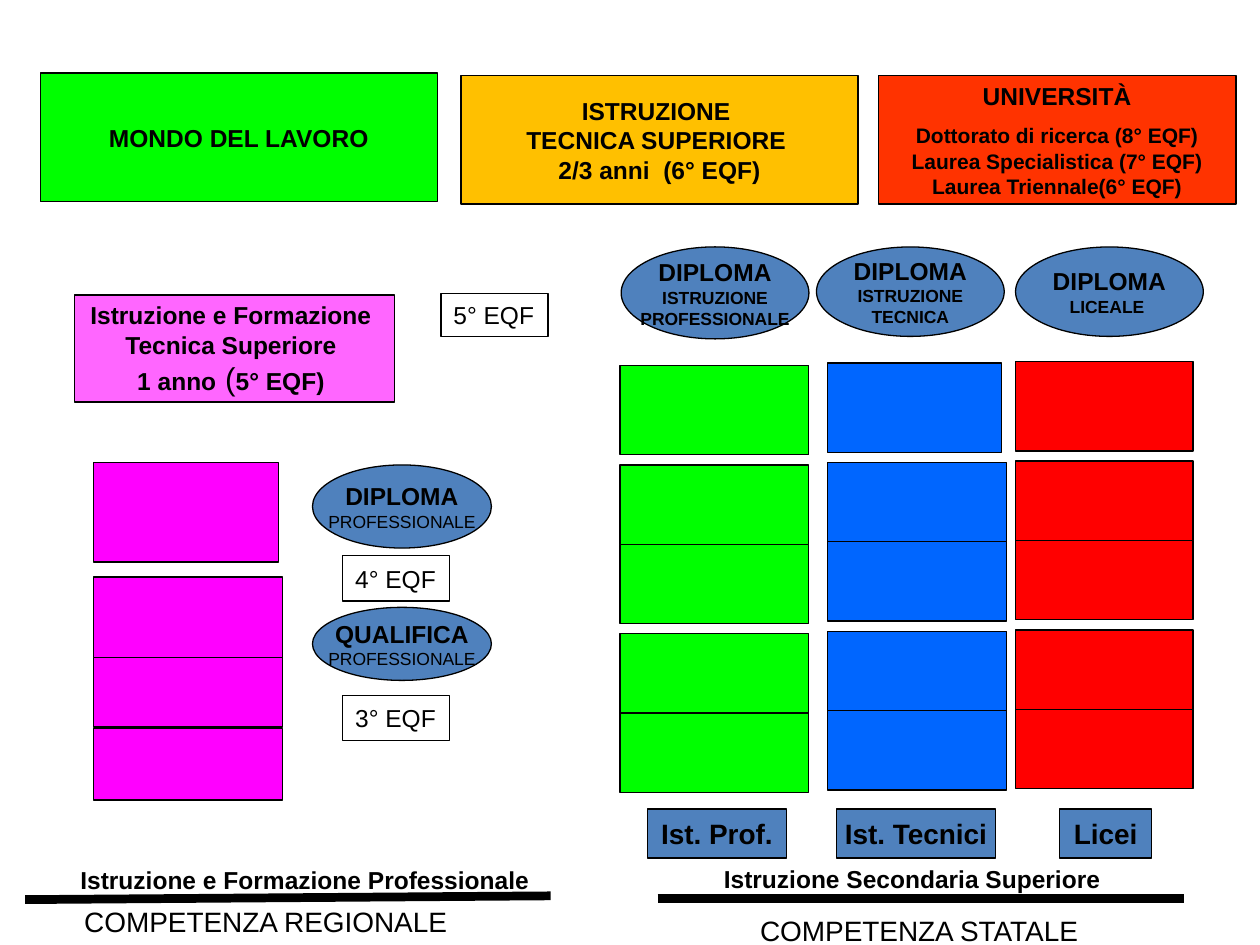
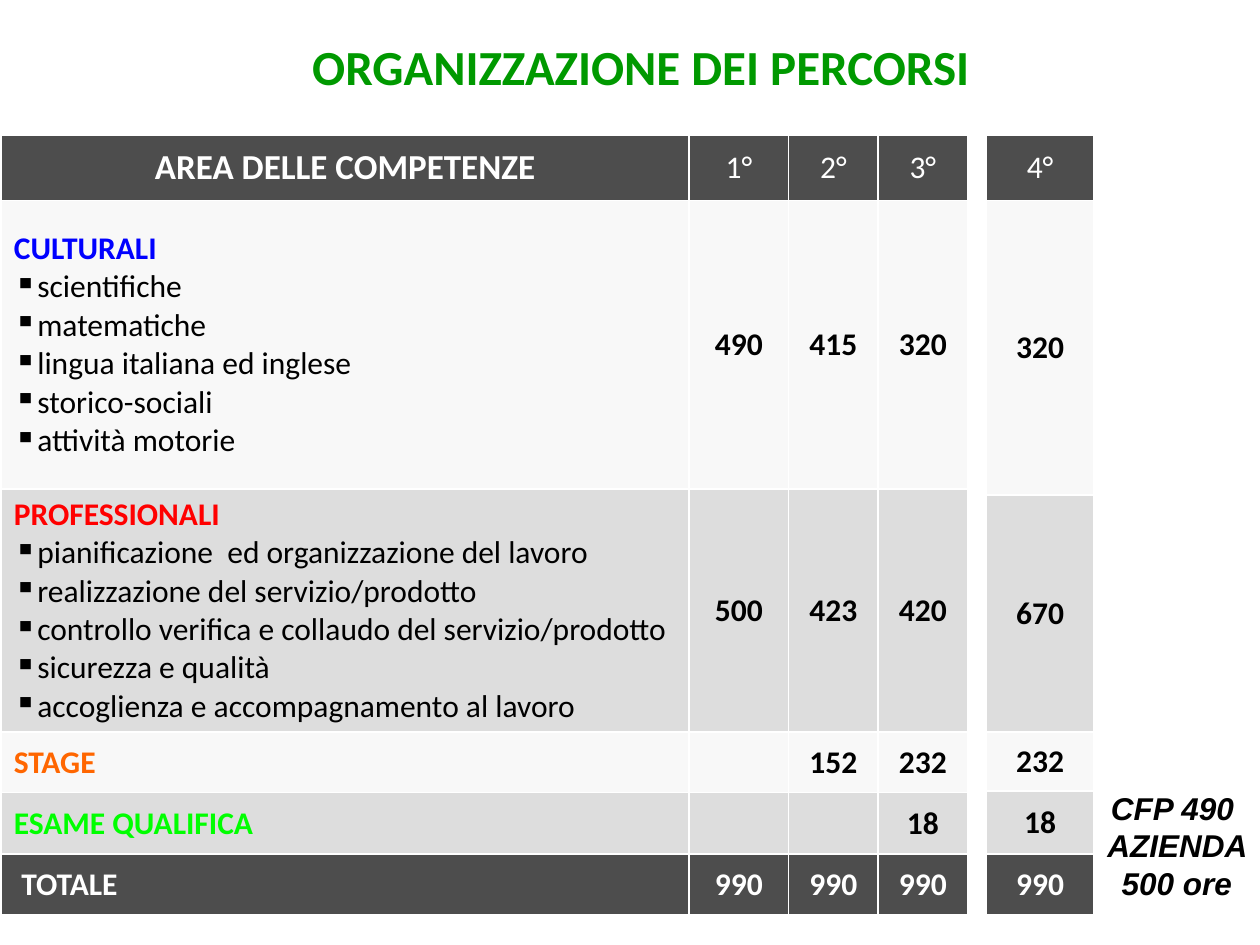
"""Builds two slides on the paths and timetable of vocational education."""
import pptx
import pptx.dml.color
import pptx.enum.shapes
import pptx.enum.text
import pptx.oxml
import pptx.oxml.ns
import pptx.util
from lxml import etree

SHAPE = pptx.enum.shapes.MSO_SHAPE
ALIGN = pptx.enum.text.PP_ALIGN
ANCHOR = pptx.enum.text.MSO_ANCHOR
BLACK, WHITE, BLUE = "000000", "FFFFFF", "4F81BD"
GREEN, AZURE, RED, MAGENTA = "00FF00", "0066FF", "FF0000", "FF00FF"
DARK, LIGHT, MID = "4D4D4D", "F8F8F8", "DDDDDD"
GRID_COLUMNS, GRID_ROWS = 100, 75


def rgb(color):
    return pptx.dml.color.RGBColor.from_string(color)


def indent(paragraph, inches, bullet=None):
    properties = paragraph._p.get_or_add_pPr()
    margin = pptx.util.Inches(inches)
    properties.set("marL", str(margin))
    properties.set("indent", str(-margin if bullet else 0))
    if bullet:
        mark = etree.SubElement(properties, pptx.oxml.ns.qn("a:buChar"))
        mark.set("char", bullet)


def add_text(frame, text, size=14, color=BLACK, font="Arial", bold=False, italic=False,
             align=ALIGN.CENTER, before=0, left=0, bullet=None, same_line=False):
    paragraph = frame.paragraphs[-1]
    if paragraph.runs and not same_line:
        paragraph = frame.add_paragraph()
    if not same_line:
        paragraph.alignment = align
        paragraph.space_before = pptx.util.Pt(before)
        if left:
            indent(paragraph, left, bullet)
    run = paragraph.add_run()
    run.text = text
    run.font.size = pptx.util.Pt(size)
    run.font.name = font
    run.font.bold = bold
    run.font.italic = italic
    run.font.color.rgb = rgb(color)


def add_lines(frame, lines, **shared):
    for line in [lines] if isinstance(lines, str) else lines:
        text, special = (line, {}) if isinstance(line, str) else line
        add_text(frame, text, **{**shared, **special})


class Deck:
    """Holds the style, the grid and the current slide."""

    def __init__(self):
        self.presentation = pptx.Presentation()
        self.presentation.slide_width = pptx.util.Inches(10)
        self.presentation.slide_height = pptx.util.Inches(7.5)
        self.slide = None

    def x(self, columns):
        return round(self.presentation.slide_width * columns / GRID_COLUMNS)

    def y(self, rows):
        return round(self.presentation.slide_height * rows / GRID_ROWS)

    def area(self, left, top, width, height):
        return self.x(left), self.y(top), self.x(width), self.y(height)

    def new_slide(self):
        layouts = self.presentation.slide_layouts
        self.slide = self.presentation.slides.add_slide(layouts[6])

    def box(self, area, lines=(), fill=None, kind=SHAPE.RECTANGLE, **style):
        shape = self.slide.shapes.add_shape(kind, *self.area(*area))
        shape.shadow.inherit = False
        if fill:
            shape.fill.solid()
            shape.fill.fore_color.rgb = rgb(fill)
        else:
            shape.fill.background()
        shape.line.color.rgb = rgb(BLACK)
        shape.line.width = pptx.util.Pt(0.75)
        shape.text_frame.word_wrap = False
        add_lines(shape.text_frame, lines, **style)

    def oval(self, area, lines):
        self.box(area, lines, BLUE, SHAPE.OVAL, bold=True)

    def label(self, area, lines, wrap=True, anchor=ANCHOR.TOP, **style):
        frame = self.slide.shapes.add_textbox(*self.area(*area)).text_frame
        frame.word_wrap = wrap
        frame.vertical_anchor = anchor
        add_lines(frame, lines, **style)

    def rule(self, start_x, start_y, end_x, end_y):
        line = self.slide.shapes.add_connector(
            pptx.enum.shapes.MSO_CONNECTOR.STRAIGHT,
            self.x(start_x), self.y(start_y), self.x(end_x), self.y(end_y))
        line.line.color.rgb = rgb(BLACK)
        line.line.width = pptx.util.Pt(5)
        etree.SubElement(line._element.spPr, pptx.oxml.ns.qn("a:effectLst"))

    def cell(self, cell, lines, fill):
        cell.fill.solid()
        cell.fill.fore_color.rgb = rgb(fill)
        cell.vertical_anchor = ANCHOR.MIDDLE
        for position, side in enumerate(("lnL", "lnR", "lnT", "lnB")):
            border = pptx.oxml.parse_xml(
                f'<a:{side} {pptx.oxml.ns.nsdecls("a")} w="12700"><a:solidFill>'
                f'<a:srgbClr val="{WHITE}"/></a:solidFill></a:{side}>')
            cell._tc.get_or_add_tcPr().insert(position, border)
        add_lines(cell.text_frame, lines, size=18, font="Calibri", bold=True,
                  color=WHITE if fill == DARK else BLACK)

    def table(self, left, top, widths, heights, fills, content):
        area = self.area(left, top, sum(widths), sum(heights))
        table = self.slide.shapes.add_table(len(heights), len(widths), *area).table
        table.first_row = table.horz_banding = False
        for column, width in zip(table.columns, widths):
            column.width = self.x(width)
        for row, height, fill, texts in zip(table.rows, heights, fills, content):
            row.height = self.y(height)
            for cell, lines in zip(row.cells, texts):
                self.cell(cell, lines or (), fill)


def small(text, **style):
    return text, {"size": 10, **style}


def heading(text, color, **style):
    return text, {"color": color, "align": ALIGN.LEFT, **style}


def plain(text):
    return [(text, {"bold": False})]


def competences(title, color, items):
    bullet = {"bold": False, "align": ALIGN.LEFT, "left": 0.14, "bullet": "▪"}
    return [heading(title, color)] + [(item, bullet) for item in items]


def education_paths(deck):
    deck.new_slide()
    deck.box((36.6, 6, 31.5, 10.2),
             ["ISTRUZIONE ", "TECNICA SUPERIORE ", "2/3 anni  (6° EQF)"], "FFC000", bold=True)
    deck.box((69.7, 6, 28.4, 10.2),
             ["UNIVERSITÀ",
              ("Dottorato di ricerca (8° EQF)", {"size": 12, "before": 7}),
              ("Laurea Specialistica (7° EQF)", {"size": 12}),
              ("Laurea Triennale(6° EQF)", {"size": 12})], "FF3300", bold=True)
    deck.box((3.2, 5.8, 31.5, 10.2), "MONDO DEL LAVORO", GREEN, bold=True)
    deck.box((5.9, 23.4, 25.4, 8.5),
             ["Istruzione e Formazione ", "Tecnica Superiore ", "1 anno",
              (" (", {"size": 18, "bold": False, "same_line": True}),
              ("5° EQF) ", {"same_line": True})], "FF66FF", bold=True)

    for left, top, height, level in ((35, 23.3, 3.4, 5), (27.2, 44.1, 3.6, 4),
                                     (27.2, 55.2, 3.6, 3)):
        deck.box((left, top, 8.5, height), f"{level}° EQF", align=ALIGN.LEFT)
    for top, height, award in ((48.2, 5.8, "QUALIFICA"), (36.9, 6.6, "DIPLOMA")):
        deck.oval((24.8, top, 14.2, height), [award, small("PROFESSIONALE", bold=False)])

    for left, height, schools in ((49.3, 7.3, ("ISTRUZIONE", "PROFESSIONALE")),
                                  (64.8, 7.1, ("ISTRUZIONE", "TECNICA")),
                                  (80.6, 7.1, ("LICEALE ",))):
        deck.oval((left, 19.6, 14.9, height), ["DIPLOMA"] + [small(name) for name in schools])
    for left, width, school in ((51.4, 11, "Ist. Prof."), (66.4, 12.6, "Ist. Tecnici"),
                                (84.1, 7.3, "Licei")):
        deck.box((left, 64.2, width, 3.9), school, BLUE, size=16, bold=True)

    for left, top, last_width, width, color in ((49.2, 29, 15, 15, GREEN),
                                                (65.7, 28.8, 13.8, 14.2, AZURE),
                                                (80.6, 28.7, 14.1, 14.1, RED)):
        deck.box((left, top, last_width, 7.1), fill=color)
        for two_years in (7.9, 21.3):
            for year in range(2):
                deck.box((left, top + two_years + year * 6.3, width, 6.3), fill=color)
    for top, width, height in ((36.7, 14.7, 7.9), (57.8, 15, 5.7), (52, 15, 5.7),
                               (45.8, 15, 6.4)):
        deck.box((7.4, top, width, height), fill=MAGENTA)

    deck.rule(2, 71.4, 43.7, 71.1)
    deck.rule(52.2, 71.3, 94, 71.3)
    deck.label((1.6, 68.2, 45.2, 3.3), "Istruzione e Formazione Professionale", bold=True)
    deck.label((56.4, 68.1, 32, 3.4), "Istruzione Secondaria Superiore", wrap=False, bold=True)
    deck.label((5.6, 71.3, 31, 3.7), "COMPETENZA REGIONALE", wrap=False, size=16)
    deck.label((59, 72, 27.9, 3.7), "COMPETENZA STATALE", wrap=False, size=16)


def path_hours(deck):
    deck.new_slide()
    deck.label((5.1, 2.1, 91.5, 6.3), "ORGANIZZAZIONE DEI PERCORSI", anchor=ANCHOR.MIDDLE,
               size=28, font="Calibri", color="009900", bold=True)
    cultural = competences("CULTURALI", "0000FF", (
        "scientifiche", "matematiche", "lingua italiana ed inglese", "storico-sociali",
        "attività motorie"))
    professional = competences("PROFESSIONALI", RED, (
        "pianificazione  ed organizzazione del lavoro", "realizzazione del servizio/prodotto",
        "controllo verifica e collaudo del servizio/prodotto", "sicurezza e qualità",
        "accoglienza e accompagnamento al lavoro"))
    fills = (DARK, LIGHT, MID, LIGHT, MID, DARK)
    deck.table(0.1, 10.7, (54.6, 7.9, 7.1, 7.1), (5.2, 22.9, 19.3, 4.8, 4.9, 4.8), fills, (
        ([("AREA DELLE COMPETENZE", {"size": 20})], plain("1°"), plain("2°"), plain("3°")),
        (cultural, "490", "415", "320"),
        (professional, "500", "423", "420"),
        ([heading("STAGE", "FF6600")], None, "152", "232"),
        ([heading("ESAME QUALIFICA", GREEN)], None, None, "18"),
        ([heading("TOTALE", WHITE, left=0.06)], "990", "990", "990")))
    deck.table(78.3, 10.7, (8.5,), (5.2, 23.4, 18.8, 4.7, 5, 4.8), fills, (
        (plain("4°"),), ("320",), ("670",), ("232",), ("18",), ("990",)))
    deck.label((86.8, 62.1, 13.2, 10.1), ["CFP 490 ", "AZIENDA 500 ore"],
               size=18, bold=True, italic=True)


def main():
    deck = Deck()
    education_paths(deck)
    path_hours(deck)
    deck.presentation.save("out.pptx")


if __name__ == "__main__":
    main()
